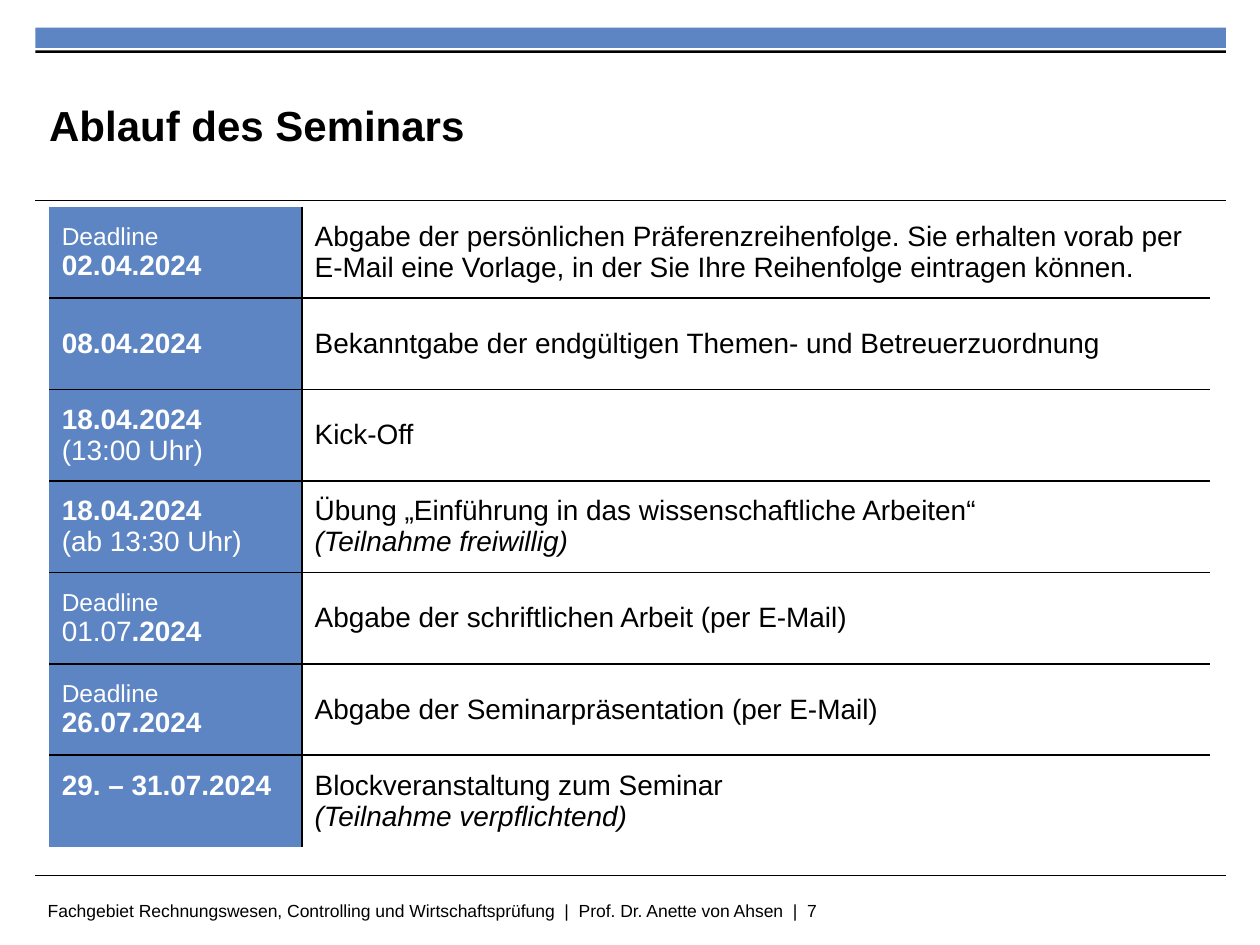
from lxml import etree
from pptx import Presentation
from pptx.dml.color import RGBColor
from pptx.enum.shapes import MSO_CONNECTOR, MSO_SHAPE
from pptx.enum.text import MSO_ANCHOR, MSO_AUTO_SIZE, PP_ALIGN
from pptx.oxml.ns import qn
from pptx.util import Inches, Pt

STRAIGHT = MSO_CONNECTOR.STRAIGHT
RECTANGLE = MSO_SHAPE.RECTANGLE
MIDDLE = MSO_ANCHOR.MIDDLE
TOP = MSO_ANCHOR.TOP
LEFT = PP_ALIGN.LEFT
NO_AUTOFIT = MSO_AUTO_SIZE.NONE

TITLE_ONLY = 5
FONT = "Arial"
BLUE, BLACK, WHITE = "5D85C3", "000000", "FFFFFF"
DATE_SHARE = 0.218

PLAIN = {"size": 16}
SMALL = {"size": 14}
BOLD = {"size": 16, "bold": True}
ITALIC = {"size": 16, "italic": True}

# Each row: date lines, then description lines; a line is a list of (text, style).
SCHEDULE = [
    ([[("Deadline", SMALL)], [("02.04.2024", BOLD)]],
     [[("Abgabe der persönlichen Präferenzreihenfolge. Sie erhalten vorab per "
        "E-Mail eine Vorlage, in der Sie Ihre Reihenfolge eintragen können.", PLAIN)]]),
    ([[("08.04.2024", BOLD)]],
     [[("Bekanntgabe der endgültigen Themen- und Betreuerzuordnung", PLAIN)]]),
    ([[("18.04.2024", BOLD)], [("(13:00 Uhr)", PLAIN)]],
     [[("Kick-Off", PLAIN)]]),
    ([[("18.04.2024", BOLD)], [("(ab 13:30 Uhr)", PLAIN)]],
     [[("Übung „Einführung in das wissenschaftliche Arbeiten“", PLAIN)],
      [("(Teilnahme freiwillig)", ITALIC)]]),
    ([[("Deadline", SMALL)], [("01.07", PLAIN), (".2024", BOLD)]],
     [[("Abgabe der schriftlichen Arbeit (per E-Mail)", PLAIN)]]),
    ([[("Deadline", SMALL)], [("26.07.2024", BOLD)]],
     [[("Abgabe der Seminarpräsentation (per E-Mail)", PLAIN)]]),
    ([[("29. – 31.07.2024", BOLD)]],
     [[("Blockveranstaltung zum Seminar", PLAIN)],
      [("(Teilnahme verpflichtend)", ITALIC)]]),
]


def color(value):
    return RGBColor.from_string(value)


def style_font(font, size, fill, bold=False, italic=False):
    font.name = FONT
    font.size = Pt(size)
    font.bold = bold
    font.italic = italic
    font.color.rgb = color(fill)


def add_bar(slide, left, top, width, height, fill):
    bar = slide.shapes.add_shape(
        RECTANGLE, Inches(left), Inches(top), Inches(width), Inches(height))
    bar.shadow.inherit = False
    bar.fill.solid()
    bar.fill.fore_color.rgb = color(fill)
    bar.line.fill.background()


def add_rule(slide, left, top, width):
    rule = slide.shapes.add_connector(
        STRAIGHT, Inches(left), Inches(top), Inches(left + width), Inches(top))
    rule.line.color.rgb = color(BLACK)
    rule.line.width = Pt(0.6)
    etree.SubElement(rule.element.spPr, qn("a:effectLst"))


def add_frame(slide, left, width):
    """Draw the header bars and the rules above and below the content."""
    add_bar(slide, left, 0.22, width, 0.16, BLUE)
    add_bar(slide, left, 0.4, width, 0.02, BLACK)
    for top in (1.59, 6.95):
        add_rule(slide, left, top, width)


def place_title(slide, text, left, top, width, height):
    title = slide.shapes.title
    title.left, title.top = Inches(left), Inches(top)
    title.width, title.height = Inches(width), Inches(height)
    frame = title.text_frame
    frame.margin_left = frame.margin_right = frame.margin_top = frame.margin_bottom = 0
    frame.vertical_anchor = MIDDLE
    frame.auto_size = NO_AUTOFIT
    frame.text = text
    frame.paragraphs[0].alignment = LEFT
    style_font(frame.paragraphs[0].runs[0].font, 24, BLACK, bold=True)


def add_footer(slide, text, left, top, width, height):
    footer = slide.shapes.add_textbox(
        Inches(left), Inches(top), Inches(width), Inches(height))
    frame = footer.text_frame
    frame.word_wrap = True
    frame.vertical_anchor = MIDDLE
    frame.text = text
    style_font(frame.paragraphs[0].runs[0].font, 10, BLACK)


def set_borders(cell, visible):
    """Draw a black border on the visible sides (L, R, T, B) and none elsewhere."""
    properties = cell._tc.get_or_add_tcPr()
    for side in "LRTB":
        border = etree.SubElement(properties, qn(f"a:ln{side}"), w=str(Pt(1)))
        if side in visible:
            fill = etree.SubElement(border, qn("a:solidFill"))
            etree.SubElement(fill, qn("a:srgbClr"), val=BLACK)
        else:
            etree.SubElement(border, qn("a:noFill"))


def fill_cell(cell, lines, text_color):
    cell.vertical_anchor = MIDDLE
    frame = cell.text_frame
    for index, line in enumerate(lines):
        paragraph = frame.add_paragraph() if index else frame.paragraphs[0]
        for text, style in line:
            run = paragraph.add_run()
            run.text = text
            style_font(run.font, fill=text_color, **style)


def add_schedule(slide, rows, left, top, width, height):
    table = slide.shapes.add_table(
        len(rows), 2, Inches(left), Inches(top), Inches(width), Inches(height)).table
    table.first_row = table.horz_banding = False
    table.columns[0].width = Inches(width * DATE_SHARE)
    table.columns[1].width = Inches(width * (1 - DATE_SHARE))
    last = len(rows) - 1
    for index, (date, description) in enumerate(rows):
        horizontal = ("T" if index > 0 else "") + ("B" if index < last else "")
        date_cell, description_cell = table.cell(index, 0), table.cell(index, 1)
        set_borders(date_cell, horizontal + "R")
        set_borders(description_cell, horizontal + "L")
        date_cell.fill.solid()
        date_cell.fill.fore_color.rgb = color(BLUE)
        description_cell.fill.background()
        fill_cell(date_cell, date, WHITE)
        fill_cell(description_cell, description, BLACK)
    final_date = table.cell(last, 0)
    final_date.vertical_anchor = TOP
    final_date.margin_top = Inches(0.12)


def main():
    presentation = Presentation()
    presentation.slide_width, presentation.slide_height = Inches(10), Inches(7.5)
    slide = presentation.slides.add_slide(presentation.slide_layouts[TITLE_ONLY])
    add_frame(slide, 0.28, 9.45)
    place_title(slide, "Ablauf des Seminars", 0.39, 0.53, 7.26, 0.92)
    add_schedule(slide, SCHEDULE, 0.39, 1.64, 9.21, 5.08)
    add_footer(
        slide,
        "Fachgebiet Rechnungswesen, Controlling und Wirtschaftsprüfung  |  "
        "Prof. Dr. Anette von Ahsen  |  7",
        0.28, 7.1, 7.88, 0.25)
    presentation.save("out.pptx")


if __name__ == "__main__":
    main()
